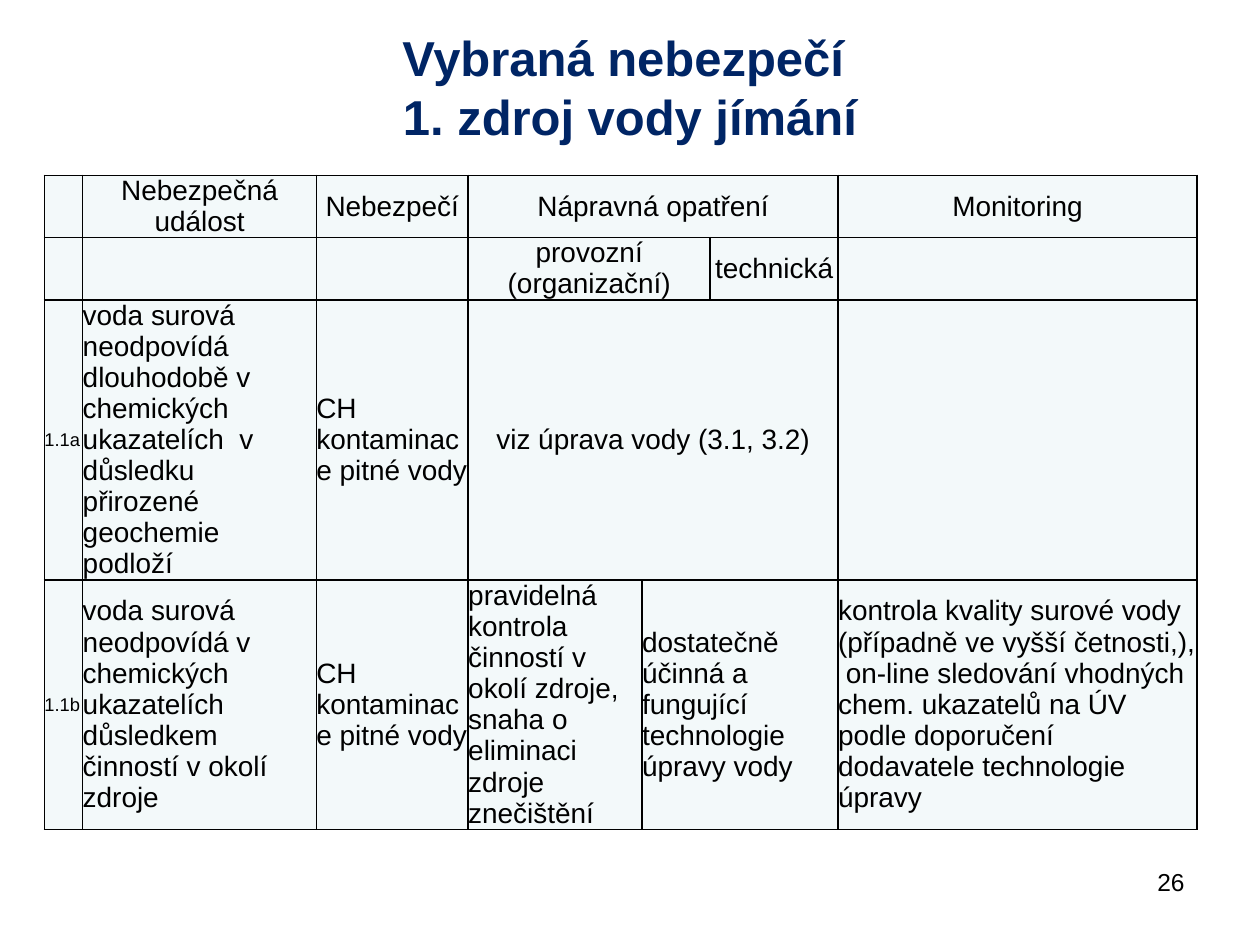
from lxml import etree
from pptx import Presentation
from pptx.dml.color import RGBColor
from pptx.enum.text import MSO_ANCHOR, PP_ALIGN
from pptx.oxml.ns import qn
from pptx.util import Pt

CENTER, LEFT, RIGHT = PP_ALIGN.CENTER, PP_ALIGN.LEFT, PP_ALIGN.RIGHT
MIDDLE = MSO_ANCHOR.MIDDLE
TITLE_ONLY = 5

# Content
TITLE = "Vybraná nebezpečí \v1. zdroj vody jímání"
PAGE_NUMBER = "26"
CONTAMINATION = "CH kontaminace pitné vody"
ROWS = [
    ["", "Nebezpečná událost", "Nebezpečí", "Nápravná opatření", "", "", "Monitoring"],
    ["", "", "", "provozní (organizační)", "", "technická", ""],
    ["1.1a",
     "voda surová neodpovídá dlouhodobě v chemických ukazatelích  v důsledku "
     "přirozené geochemie podloží",
     CONTAMINATION, "viz úprava vody (3.1, 3.2)", "", "", ""],
    ["1.1b",
     "voda surová neodpovídá v chemických ukazatelích důsledkem činností v okolí zdroje",
     CONTAMINATION,
     "pravidelná kontrola činností v okolí zdroje, snaha o eliminaci zdroje znečištění",
     "dostatečně účinná a fungující technologie úpravy vody", "",
     "kontrola kvality surové vody (případně ve vyšší četnosti,),  on-line sledování "
     "vhodných chem. ukazatelů na ÚV podle doporučení dodavatele technologie úpravy"],
]
# Row, first column, last column
MERGES = [(0, 3, 5), (1, 3, 4), (2, 3, 5), (3, 4, 5)]
COLUMN_WIDTHS = [21.9, 133.5, 86.8, 99.4, 38.9, 73.1, 205.2]
ROW_HEIGHTS = [35.5, 35.5, 144.7, 142.6]
HEADER_ROWS = 2


def color(value):
    return RGBColor.from_string(value)


def set_font(paragraph, size, value="000000", bold=False):
    font = paragraph.font
    font.name, font.size, font.bold = "Arial", Pt(size), bold
    font.color.rgb = color(value)


def add_borders(cell):
    properties = cell._tc.get_or_add_tcPr()
    for side in ("a:lnL", "a:lnR", "a:lnT", "a:lnB"):
        line = etree.SubElement(properties, qn(side), w=str(Pt(1)))
        fill = etree.SubElement(line, qn("a:solidFill"))
        etree.SubElement(fill, qn("a:srgbClr"), val="000000")


presentation = Presentation()
presentation.slide_width, presentation.slide_height = Pt(720), Pt(540)
slide = presentation.slides.add_slide(presentation.slide_layouts[TITLE_ONLY])

# Title
title = slide.shapes.title
title.left, title.top, title.width, title.height = Pt(36), Pt(21.6), Pt(648), Pt(55.4)
title.text_frame.text = TITLE
title.text_frame.vertical_anchor = MIDDLE
title_paragraph = title.text_frame.paragraphs[0]
title_paragraph.alignment = CENTER
set_font(title_paragraph, 28, "002565", bold=True)

# Table of hazards
table = slide.shapes.add_table(
    len(ROWS), len(COLUMN_WIDTHS), Pt(25.4), Pt(100.2),
    Pt(sum(COLUMN_WIDTHS)), Pt(sum(ROW_HEIGHTS))).table
table.first_row = table.horz_banding = False
for column, width in zip(table.columns, COLUMN_WIDTHS):
    column.width = Pt(width)
for row, height in zip(table.rows, ROW_HEIGHTS):
    row.height = Pt(height)

for row_index, texts in enumerate(ROWS):
    for column_index, text in enumerate(texts):
        cell = table.cell(row_index, column_index)
        cell.text = text
        cell.vertical_anchor = MIDDLE
        cell.margin_left = cell.margin_right = cell.margin_top = cell.margin_bottom = 0
        add_borders(cell)
        cell.fill.solid()
        cell.fill.fore_color.rgb = color("F3F9FA")
        paragraph = cell.text_frame.paragraphs[0]
        centered = row_index < HEADER_ROWS or (row_index, column_index) == (2, 3)
        paragraph.alignment = CENTER if centered else LEFT
        set_font(paragraph, 10.5 if column_index == 0 else 16)

for row_index, first, last in MERGES:
    table.cell(row_index, first).merge(table.cell(row_index, last))

# Page number
number_box = slide.shapes.add_textbox(Pt(516), Pt(491.8), Pt(168), Pt(37.4))
number_box.text_frame.word_wrap = True
number_box.text_frame.text = PAGE_NUMBER
number_paragraph = number_box.text_frame.paragraphs[0]
number_paragraph.alignment = RIGHT
set_font(number_paragraph, 14)

presentation.save("out.pptx")
